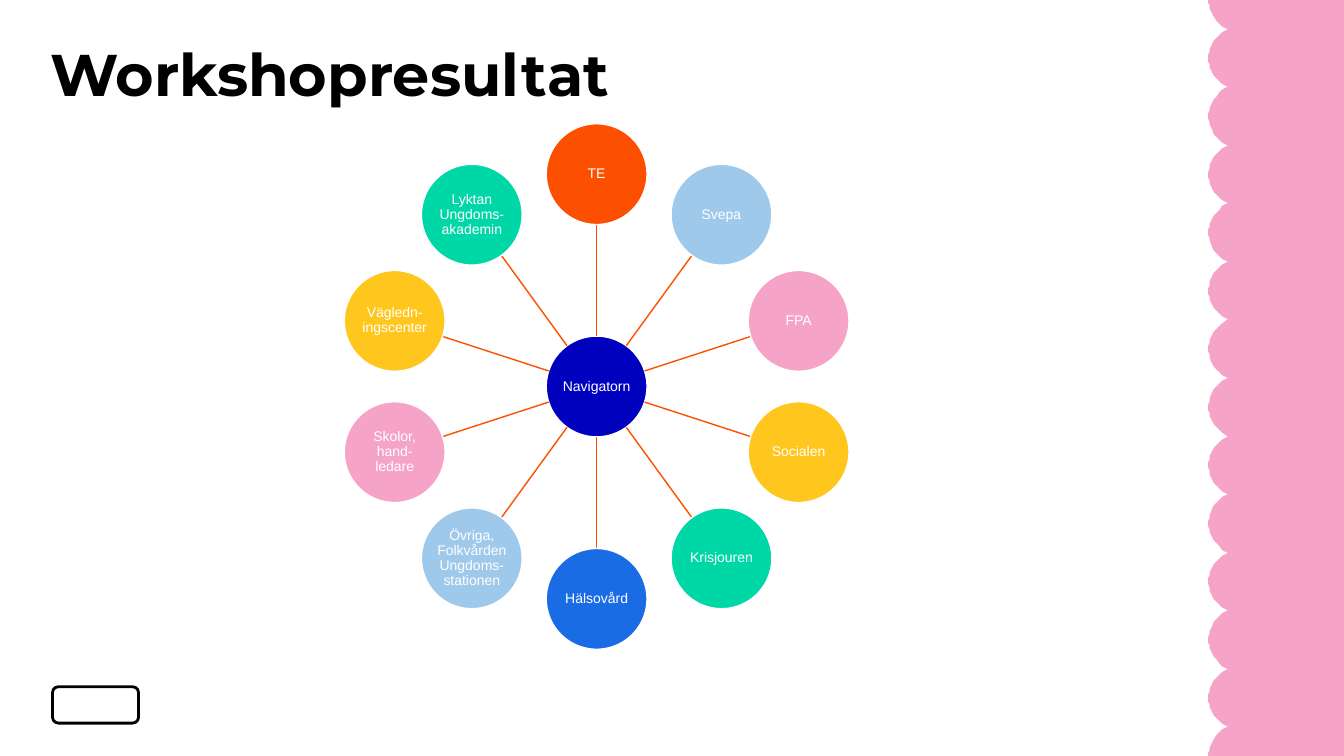
import math

from lxml import etree
from pptx import Presentation
from pptx.dml.color import RGBColor
from pptx.enum import shapes, text
from pptx.oxml import ns
from pptx.util import Pt

WIDTH, HEIGHT = 960, 540
HUB_X, HUB_Y = 426.2, 276.1
RING_RADIUS = 151.7
CIRCLE_SIZE = 72
SPOKE_COLOR = "FD4F00"

HUB = ("Navigatorn", "0000BF")
# Clockwise from the top
PARTNERS = [
    ("TE", "FD4F00"),
    ("Svepa", "9FC9EB"),
    ("FPA", "F5A3C7"),
    ("Socialen", "FFC61E"),
    ("Krisjouren", "00D7A7"),
    ("Hälsovård", "1A6CE4"),
    ("Övriga, Folkvården Ungdoms-stationen", "9FC9EB"),
    ("Skolor, hand-ledare", "F5A3C7"),
    ("Vägledn-ingscenter", "FFC61E"),
    ("Lyktan Ungdoms-akademin", "00D7A7"),
]


def rgb(value):
    return RGBColor.from_string(value)


def set_font(p, name, size, color, bold=False):
    for r in p.runs:
        r.font.name = name
        r.font.size = Pt(size)
        r.font.bold = bold
        r.font.color.rgb = rgb(color)


def set_insets(tf, inset):
    tf.margin_left = tf.margin_right = Pt(inset)
    tf.margin_top = tf.margin_bottom = Pt(inset)


def add_title(slide, title):
    sp = slide.shapes.title
    sp.left, sp.top, sp.width, sp.height = Pt(36), Pt(32.4), Pt(885), Pt(62)
    tf = sp.text_frame
    tf.text = title
    tf.word_wrap = True
    tf.auto_size = text.MSO_AUTO_SIZE.NONE
    tf.vertical_anchor = text.MSO_ANCHOR.TOP
    set_insets(tf, 0)
    p = tf.paragraphs[0]
    p.alignment = text.PP_ALIGN.LEFT
    p.line_spacing = 0.9
    set_font(p, "Montserrat", 42, "000000", bold=True)


def add_scalloped_band(slide, left=863.3, scallops=13, radius=22.6, steps=20):
    """Fill the right side of the slide up to an edge of circular arcs."""
    pitch = HEIGHT / scallops
    edge = []
    for i in range(scallops * steps + 1):
        y = i * pitch / steps
        offset = y - round(i / steps) * pitch
        x = left + radius - math.sqrt(radius ** 2 - offset ** 2)
        edge.append((x, y))
    builder = slide.shapes.build_freeform(WIDTH, 0, scale=Pt(1))
    builder.add_line_segments(edge + [(WIDTH, HEIGHT)], close=True)
    sp = builder.convert_to_shape()
    sp.shadow.inherit = False
    sp.fill.solid()
    sp.fill.fore_color.rgb = rgb("F5A4C7")
    sp.line.fill.background()


def add_emblem(slide):
    sp = slide.shapes.add_shape(
        shapes.MSO_SHAPE.ROUNDED_RECTANGLE, Pt(37.5), Pt(490.5), Pt(61.5), Pt(26))
    sp.shadow.inherit = False
    sp.fill.background()
    sp.line.color.rgb = rgb("000000")
    sp.line.width = Pt(2)


def add_circle(slide, x, y, label, color):
    """Add a labelled circle centred on (x, y)."""
    sp = slide.shapes.add_shape(
        shapes.MSO_SHAPE.OVAL, Pt(x - CIRCLE_SIZE / 2), Pt(y - CIRCLE_SIZE / 2),
        Pt(CIRCLE_SIZE), Pt(CIRCLE_SIZE))
    sp.shadow.inherit = False
    sp.fill.solid()
    sp.fill.fore_color.rgb = rgb(color)
    sp.line.color.rgb = rgb("FFFFFF")
    sp.line.width = Pt(1)
    tf = sp.text_frame
    tf.text = label
    tf.word_wrap = True
    tf.vertical_anchor = text.MSO_ANCHOR.MIDDLE
    set_insets(tf, 0.6)
    p = tf.paragraphs[0]
    p.alignment = text.PP_ALIGN.CENTER
    p.line_spacing = 0.9
    set_font(p, "Arial", 10, "FFFFFF")


def point_on_ring(angle, radius):
    return HUB_X + radius * math.sin(angle), HUB_Y - radius * math.cos(angle)


def add_spoke(slide, angle):
    x1, y1 = point_on_ring(angle, CIRCLE_SIZE / 2)
    x2, y2 = point_on_ring(angle, RING_RADIUS - CIRCLE_SIZE / 2)
    line = slide.shapes.add_connector(
        shapes.MSO_CONNECTOR.STRAIGHT, Pt(x1), Pt(y1), Pt(x2), Pt(y2))
    line.line.color.rgb = rgb(SPOKE_COLOR)
    line.line.width = Pt(1)
    etree.SubElement(line._element.spPr, ns.qn("a:effectLst"))


def add_network(slide):
    add_circle(slide, HUB_X, HUB_Y, *HUB)
    for i, (label, color) in enumerate(PARTNERS):
        angle = i * 2 * math.pi / len(PARTNERS)
        add_spoke(slide, angle)
        add_circle(slide, *point_on_ring(angle, RING_RADIUS), label, color)


def main():
    prs = Presentation()
    prs.slide_width, prs.slide_height = Pt(WIDTH), Pt(HEIGHT)
    slide = prs.slides.add_slide(prs.slide_layouts.get_by_name("Title Only"))
    add_emblem(slide)
    add_scalloped_band(slide)
    add_title(slide, "Workshopresultat")
    add_network(slide)
    prs.save("out.pptx")


if __name__ == "__main__":
    main()
